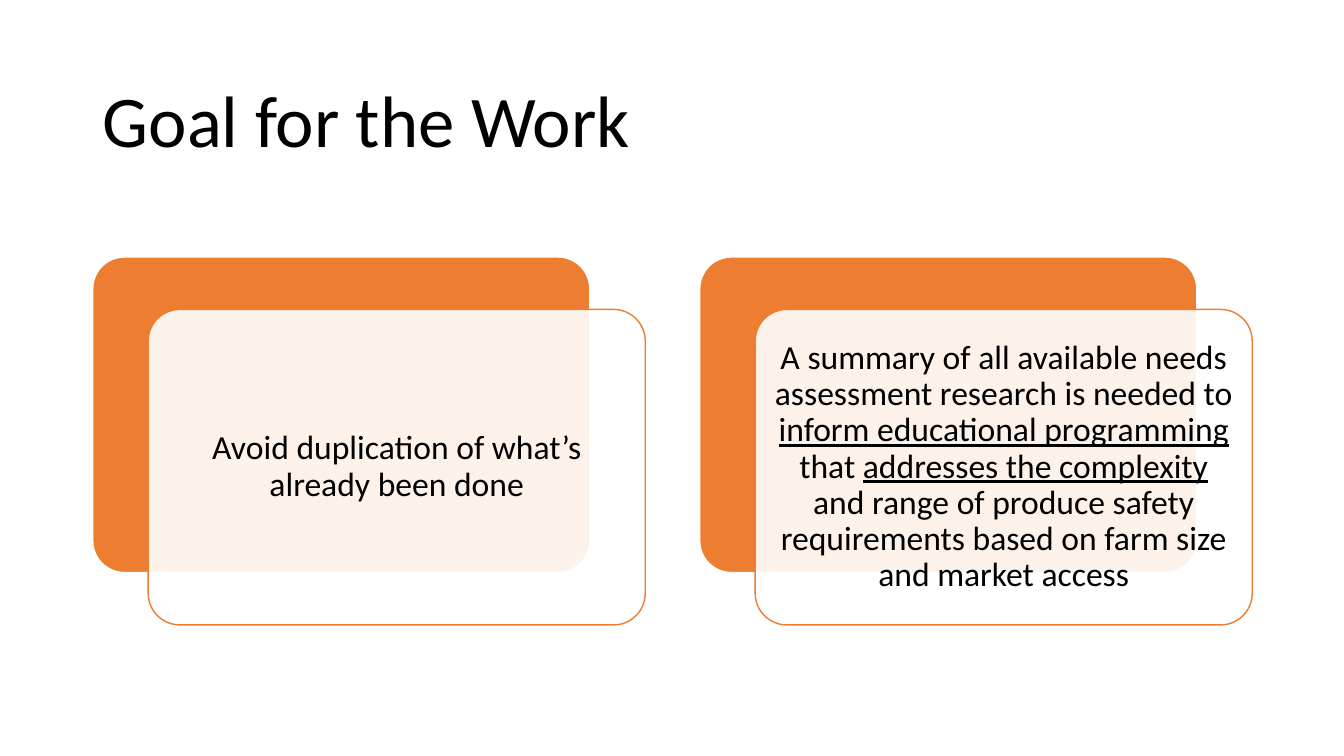
from dataclasses import dataclass
from typing import Any

from lxml import etree
from pptx import Presentation
from pptx import util as u
from pptx.dml.color import RGBColor
from pptx.enum import shapes, text
from pptx.oxml.ns import qn

PX = 9144
ORANGE, WHITE, BLACK = "ED7D31", "FFFFFF", "000000"
LEFT, TOP, STEP = 92, 255, 602
WIDE, HIGH = 493, 313
SHIFT_X, SHIFT_Y, INSET = 55, 52, 9


@dataclass
class Run:
    words: str
    line: bool = False


@dataclass
class Box:
    x: int
    y: int
    w: int
    h: int

    def emu(self) -> list[u.Emu]:
        return [u.Emu(n * PX) for n in (self.x, self.y, self.w, self.h)]


CARDS = [
    [Run("Avoid duplication of what’s already been done")],
    [
        Run("A summary of all available needs assessment research is needed to "),
        Run("inform educational programming ", True),
        Run("that "),
        Run("addresses the complexity ", True),
        Run("and range of produce safety requirements based on farm size and market access"),
    ],
]


def color(code: str) -> RGBColor:
    return RGBColor.from_string(code)


def apply(item: Any, style: dict[str, Any]) -> None:
    for name, value in style.items():
        setattr(item, name, value)


def write(frame: Any, runs: list[Run], size: int, align: Any, pad: dict[str, Any]) -> None:
    apply(frame, {"word_wrap": True, "auto_size": text.MSO_AUTO_SIZE.NONE,
                  "vertical_anchor": text.MSO_ANCHOR.MIDDLE, **pad})
    para = frame.paragraphs[0]
    apply(para, {"alignment": align, "line_spacing": 0.9})
    for part in runs:
        run = para.add_run()
        run.text = part.words
        apply(run.font, {"name": "Calibri", "size": u.Pt(size), "underline": part.line})
        run.font.color.rgb = color(BLACK)


def panel(slide: Any, box: Box, fill: str, edge: str, alpha: int = 100) -> None:
    shape = slide.shapes.add_shape(shapes.MSO_SHAPE.ROUNDED_RECTANGLE, *box.emu())
    shape.adjustments[0] = 0.1
    shape.shadow.inherit = False
    shape.fill.solid()
    shape.fill.fore_color.rgb = color(fill)
    shape.line.color.rgb = color(edge)
    shape.line.width = u.Pt(1)
    if alpha < 100:
        tint = shape.fill._xPr.find(qn("a:solidFill"))[0]
        etree.SubElement(tint, qn("a:alpha"), val=str(alpha * 1000))


def card(slide: Any, left: int, runs: list[Run]) -> None:
    back = Box(left, TOP, WIDE, HIGH)
    front = Box(left + SHIFT_X, TOP + SHIFT_Y, WIDE, HIGH)
    inner = Box(front.x + INSET, front.y + INSET, WIDE - 2 * INSET, HIGH - 2 * INSET)
    panel(slide, back, ORANGE, WHITE)
    panel(slide, front, WHITE, ORANGE, 90)
    label = slide.shapes.add_textbox(*inner.emu())
    pad = {f"margin_{side}": u.Emu(10 * PX) for side in ("left", "top", "right", "bottom")}
    write(label.text_frame, runs, 24, text.PP_ALIGN.CENTER, pad)


def main() -> None:
    deck = Presentation()
    apply(deck, {"slide_width": u.Emu(1333 * PX), "slide_height": u.Emu(750 * PX)})
    slide = deck.slides.add_slide(deck.slide_layouts[5])
    title = slide.shapes.title
    apply(title, dict(zip(("left", "top", "width", "height"), Box(92, 61, 1150, 124).emu())))
    write(title.text_frame, [Run("Goal for the Work")], 52, text.PP_ALIGN.LEFT, {})
    for i, runs in enumerate(CARDS):
        card(slide, LEFT + i * STEP, runs)
    deck.save("out.pptx")


if __name__ == "__main__":
    main()
